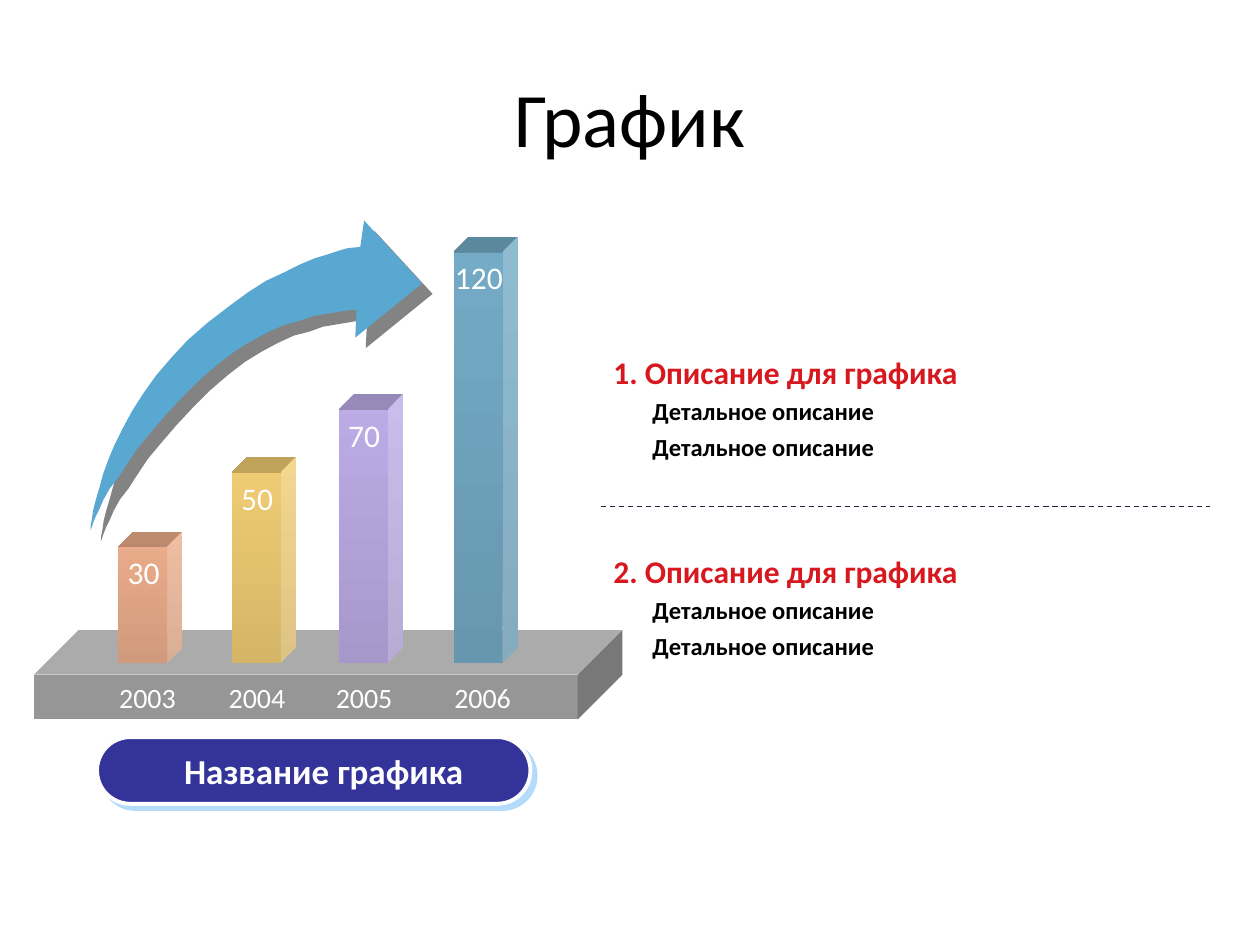
from lxml import etree
from pptx import Presentation
from pptx.dml.color import RGBColor
from pptx.enum.dml import MSO_LINE
from pptx.enum.shapes import MSO_CONNECTOR, MSO_SHAPE
from pptx.enum.text import MSO_ANCHOR, MSO_AUTO_SIZE, PP_ALIGN
from pptx.oxml.ns import qn
from pptx.util import Inches, Pt

DASH = MSO_LINE.DASH
STRAIGHT = MSO_CONNECTOR.STRAIGHT
CUBE, PILL = MSO_SHAPE.CUBE, MSO_SHAPE.ROUNDED_RECTANGLE
MIDDLE = MSO_ANCHOR.MIDDLE
GROW = MSO_AUTO_SIZE.SHAPE_TO_FIT_TEXT
CENTER, LEFT = PP_ALIGN.CENTER, PP_ALIGN.LEFT

FONT = "Calibri"
WHITE, BLACK, RED = "FEFEFE", "000000", "D7181F"
BARS = [
    ("2003", "30", 0.94, 1.17, 1.04, "D19A7C", "ECAE8C"),
    ("2004", "50", 1.84, 2.04, 1.63, "D5B667", "F0CD74"),
    ("2005", "70", 2.69, 2.89, 2.13, "A798CC", "BDACE6"),
    ("2006", "120", 3.6, 3.83, 3.38, "6797AF", "74ABC6"),
]
DETAIL = "Детальное описание"
SECTIONS = [(f"{n}. Описание для графика", [DETAIL, DETAIL]) for n in (1, 2)]
ARROW = [
    (2.63, 0.5), (2.1, 0.93), (2.11, 0.71), (2.06, 0.71), (1.94, 0.73),
    (1.76, 0.76), (1.65, 0.8), (1.53, 0.83), (1.4, 0.89), (1.27, 0.96),
    (1.14, 1.04), (1.01, 1.14), (0.87, 1.26), (0.72, 1.41), (0.59, 1.55),
    (0.47, 1.69), (0.37, 1.81), (0.29, 1.93), (0.22, 2.04), (0.15, 2.13),
    (0.1, 2.22), (0.07, 2.29), (0.04, 2.35), (0.02, 2.4), (0, 2.46),
    (0, 2.42), (0.01, 2.37), (0.02, 2.3), (0.04, 2.22), (0.07, 2.12),
    (0.1, 2.01), (0.14, 1.9), (0.19, 1.78), (0.26, 1.64), (0.33, 1.51),
    (0.42, 1.37), (0.52, 1.23), (0.64, 1.09), (0.77, 0.95), (0.93, 0.81),
    (1.1, 0.68), (1.25, 0.57), (1.39, 0.48), (1.54, 0.41), (1.66, 0.35),
    (1.78, 0.3), (1.88, 0.27), (1.97, 0.24), (2.04, 0.22), (2.14, 0.21),
    (2.17, 0),
]


def color(value):
    """Turn a hex string into a colour."""
    return RGBColor.from_string(value)


def style(p, size, value, bold=False, align=CENTER):
    """Format one paragraph."""
    p.alignment = align
    formats = {"name": FONT, "size": Pt(size), "bold": bold}
    for name, setting in formats.items():
        setattr(p.font, name, setting)
    p.font.color.rgb = color(value)


def set_fill(s, value):
    """Give a shape a plain fill without line or shadow."""
    s.shadow.inherit = False
    s.fill.solid()
    s.fill.fore_color.rgb = color(value)
    s.line.fill.background()


def add_shadow(s, value, distance, alpha):
    """Cast a hard shadow down and to the right."""
    s.shadow.inherit = False
    effects = s._element.spPr.find(qn("a:effectLst"))
    shadow = etree.SubElement(effects, qn("a:outerShdw"), dist=str(Pt(distance)),
                              dir="2700000", algn="ctr", rotWithShape="0")
    rgb = etree.SubElement(shadow, qn("a:srgbClr"), val=value)
    etree.SubElement(rgb, qn("a:alpha"), val=str(alpha * 1000))


def add_label(slide, text, center, top, width, height, size, bold=False):
    """Add a one-line white label centred on a point."""
    s = slide.shapes.add_textbox(Inches(center - width / 2), Inches(top),
                                 Inches(width), Inches(height))
    tf = s.text_frame
    tf.word_wrap = False
    tf.auto_size = GROW
    p = tf.paragraphs[0]
    p.text = text
    style(p, size, WHITE, bold)


def add_title(slide, text):
    """Fill and place the title placeholder."""
    s = slide.shapes.title
    box = {"left": 0.5, "top": 0.3, "width": 9, "height": 1.25}
    for name, value in box.items():
        setattr(s, name, Inches(value))
    s.text_frame.text = text
    s.text_frame.vertical_anchor = MIDDLE
    style(s.text_frame.paragraphs[0], 44, BLACK)


def add_section(slide, heading, details, left, top, width, height):
    """Add a red heading with indented details."""
    s = slide.shapes.add_textbox(Inches(left), Inches(top), Inches(width), Inches(height))
    tf = s.text_frame
    tf.word_wrap = True
    tf.auto_size = GROW
    for i, text in enumerate([heading, *details]):
        p = tf.add_paragraph() if i else tf.paragraphs[0]
        p.text = text
        p.line_spacing = 1.2
        if i:
            p._p.get_or_add_pPr().set("marL", str(Inches(0.31)))
        style(p, 14 if i else 18, BLACK if i else RED, True, LEFT)


def add_divider(slide, left, top, width):
    """Add a dashed rule between the sections."""
    s = slide.shapes.add_connector(STRAIGHT, Inches(left), Inches(top),
                                   Inches(left + width), Inches(top))
    s.line.color.rgb = color("212745")
    s.line.width = Pt(0.75)
    s.line.dash_style = DASH
    etree.SubElement(s._element.spPr, qn("a:effectLst"))


def add_caption(slide, text, left, top, width, height):
    """Add the pill with the chart name."""
    s = slide.shapes.add_shape(PILL, Inches(left), Inches(top), Inches(width), Inches(height))
    s.adjustments[0] = 0.5
    set_fill(s, "333399")
    s.line.color.rgb = color(WHITE)
    s.line.width = Pt(2.25)
    add_shadow(s, "B4DCFA", 4.2, 100)
    add_label(slide, text, left + width / 2 + 0.08, top + 0.05, 2.44, 0.44, 20, True)


def add_arrow(slide, left, top):
    """Add the curved growth arrow."""
    points = [(Inches(left + x), Inches(top + y)) for x, y in ARROW]
    builder = slide.shapes.build_freeform(*points[0])
    builder.add_line_segments(points[1:], close=True)
    s = builder.convert_to_shape()
    set_fill(s, "59A8D1")
    add_shadow(s, "080808", 8.5, 50)


def add_bar(slide, left, bottom, width, height, dark, light):
    """Add an upright cube, turned so that its side faces right."""
    s = slide.shapes.add_shape(CUBE, Inches(left + (width - height) / 2),
                               Inches(bottom - (height + width) / 2),
                               Inches(height), Inches(width))
    s.rotation = 270
    s._element.spPr.xfrm.set("flipV", "1")
    s.adjustments[0] = 0.238
    set_fill(s, dark)
    s.fill.gradient()
    s.fill.gradient_angle = 0
    for stop, value in zip(s.fill.gradient_stops, (dark, light)):
        stop.color.rgb = color(value)


def add_bar_chart(slide, left, top, width, height):
    """Add the base with its bars, values and years."""
    base = slide.shapes.add_shape(CUBE, Inches(left), Inches(top), Inches(width), Inches(height))
    base.adjustments[0] = 0.5
    set_fill(base, "969696")
    bottom = top + 0.26
    for year, value, x, year_center, tall, dark, light in BARS:
        add_bar(slide, x, bottom, 0.51, tall, dark, light)
        add_label(slide, year, year_center, top + 0.35, 0.69, 0.37, 16)
        value_width = 0.2 + 0.14 * len(value)
        add_label(slide, value, x + 0.2, bottom - tall + 0.12, value_width, 0.4, 18)


def main():
    """Build and save the slide."""
    prs = Presentation()
    prs.slide_width, prs.slide_height = Inches(10), Inches(7.5)
    slide = prs.slides.add_slide(prs.slide_layouts[5])
    add_title(slide, "График")
    for i, (heading, details) in enumerate(SECTIONS):
        add_section(slide, heading, details, 4.77, 2.69 + 1.58 * i, 4.67, 1.03)
    add_divider(slide, 4.77, 4.02, 4.83)
    add_caption(slide, "Название графика", 0.77, 5.85, 3.44, 0.53)
    add_arrow(slide, 0.72, 1.75)
    add_bar_chart(slide, 0.27, 5, 4.67, 0.71)
    prs.save("out.pptx")


if __name__ == "__main__":
    main()
